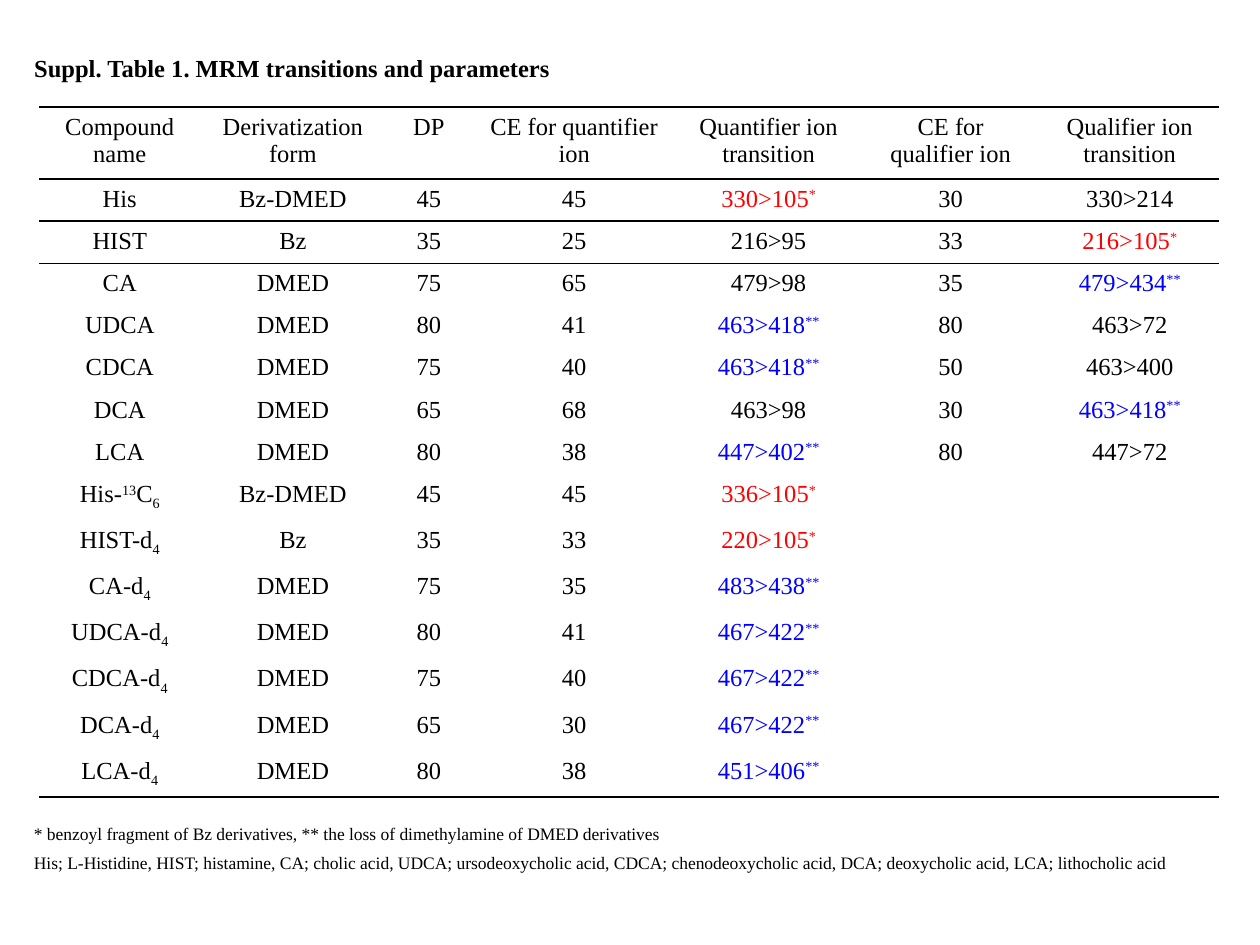
import pptx
import pptx.util
import pptx.dml.color
import pptx.enum.text
import pptx.oxml
from dataclasses import dataclass

Cm, Pt = pptx.util.Cm, pptx.util.Pt
RGB = pptx.dml.color.RGBColor
ALIGN = pptx.enum.text.PP_ALIGN


@dataclass(frozen=True)
class Theme:
    font: str = "Times New Roman"
    black: str = "000000"
    red: str = "FF0000"
    blue: str = "0000FF"
    body: int = 14
    note: int = 10
    plain: str = "{2D5ABB26-0587-4C30-8999-92F81FD0307C}"  # no style, no grid


theme = Theme()


def write(para, text, size, align, color=theme.black):
    """Fill a paragraph; parts split by | are raised by ^ or lowered by _."""
    para.alignment = align
    para.font.name = theme.font
    para.font.size = Pt(size)
    para.font.color.rgb = RGB.from_string(color)
    shift = {"^": "30000", "_": "-25000"}
    for part in text.split("|"):
        run = para.add_run()
        run.text = part.lstrip("^_")
        if part[:1] in shift:
            run._r.get_or_add_rPr().set("baseline", shift[part[0]])


def add_grid(rows, cols, left, top, width, height):
    """Add a table without style, banding or fill."""
    grid = slide.shapes.add_table(rows, cols, Cm(left), Cm(top), Cm(width), Cm(height)).table
    grid._tbl.tblPr.find(pptx.oxml.ns.qn("a:tableStyleId")).text = theme.plain
    grid.first_row = grid.horz_banding = False
    for cell in grid.iter_cells():
        cell.fill.background()
    return grid


deck = pptx.Presentation()
deck.slide_width, deck.slide_height = Cm(25.4), Cm(19.05)
slide = deck.slides.add_slide(deck.slide_layouts[6])

# Title
title = slide.shapes.add_textbox(Cm(0.69), Cm(1.07), Cm(13.3), Cm(0.6)).text_frame
title.word_wrap = True
title.margin_left = title.margin_right = title.margin_top = title.margin_bottom = 0
write(title.paragraphs[0], "Suppl. Table 1. MRM transitions and parameters",
      theme.body, ALIGN.LEFT)
title.paragraphs[0].font.bold = True

# Footnotes
notes = [
    "* benzoyl fragment of Bz derivatives, ** the loss of dimethylamine of DMED derivatives",
    "His; L-Histidine, HIST; histamine, CA; cholic acid, UDCA; ursodeoxycholic acid, "
    "CDCA; chenodeoxycholic acid, DCA; deoxycholic acid, LCA; lithocholic acid",
]
cell = add_grid(1, 1, 0.43, 16.43, 24.16, 1.19).cell(0, 0)
cell.margin_top = cell.margin_bottom = 0
for i, note in enumerate(notes):
    para = cell.text_frame.add_paragraph() if i else cell.text_frame.paragraphs[0]
    write(para, note, theme.note, ALIGN.JUSTIFY)
    para.line_spacing = 1.5

# Transitions
heads = ["Compound\nname", "Derivatization form", "DP", "CE for quantifier ion",
         "Quantifier ion transition", "CE for qualifier ion", "Qualifier ion transition"]
data = """
His Bz-DMED 45 45 330>105|^* 30 330>214
HIST Bz 35 25 216>95 33 216>105|^*
CA DMED 75 65 479>98 35 479>434|^**
UDCA DMED 80 41 463>418|^** 80 463>72
CDCA DMED 75 40 463>418|^** 50 463>400
DCA DMED 65 68 463>98 30 463>418|^**
LCA DMED 80 38 447>402|^** 80 447>72
His-|^13|C|_6 Bz-DMED 45 45 336>105|^*
HIST-d|_4 Bz 35 33 220>105|^*
CA-d|_4 DMED 75 35 483>438|^**
UDCA-d|_4 DMED 80 41 467>422|^**
CDCA-d|_4 DMED 75 40 467>422|^**
DCA-d|_4 DMED 65 30 467>422|^**
LCA-d|_4 DMED 80 38 451>406|^**
"""
rows = [heads] + [line.split() for line in data.strip().splitlines()]
widths = [3.25, 3.73, 1.75, 4.11, 3.73, 3.61, 3.61]
heights = [1.45] + [0.85] * 7 + [0.93] * 7
last = len(rows) - 1
tints = [theme.black, theme.red, theme.blue]  # by number of stars

grid = add_grid(len(rows), len(widths), 0.79, 2.16, sum(widths), sum(heights))
for col, width in zip(grid.columns, widths):
    col.width = Cm(width)
for row, height in zip(grid.rows, heights):
    row.height = Cm(height)

for r, row in enumerate(rows):
    for c, text in enumerate(row):
        frame = grid.cell(r, c).text_frame
        for i, line in enumerate(text.split("\n")):
            para = frame.add_paragraph() if i else frame.paragraphs[0]
            write(para, line, theme.body, ALIGN.CENTER, tints[text.count("*")])
grid.cell(8, 5).merge(grid.cell(last, 6))

# Rules: (row, side), each pair of touching edges drawn alike
rules = [(0, "T"), (0, "B"), (1, "T"), (1, "B"), (2, "T"), (last, "B")]
for r, side in rules:
    for c in range(len(widths)):
        spot = 8 if r == last and c > 4 else r
        props = grid.cell(spot, c)._tc.get_or_add_tcPr()
        edge = pptx.oxml.parse_xml(
            f'<a:ln{side} xmlns:a="http://schemas.openxmlformats.org/drawingml/2006/main" '
            f'w="{Pt(1)}"><a:solidFill><a:srgbClr val="{theme.black}"/></a:solidFill></a:ln{side}>')
        props.insert(len(props) - 1, edge)

deck.save("out.pptx")
